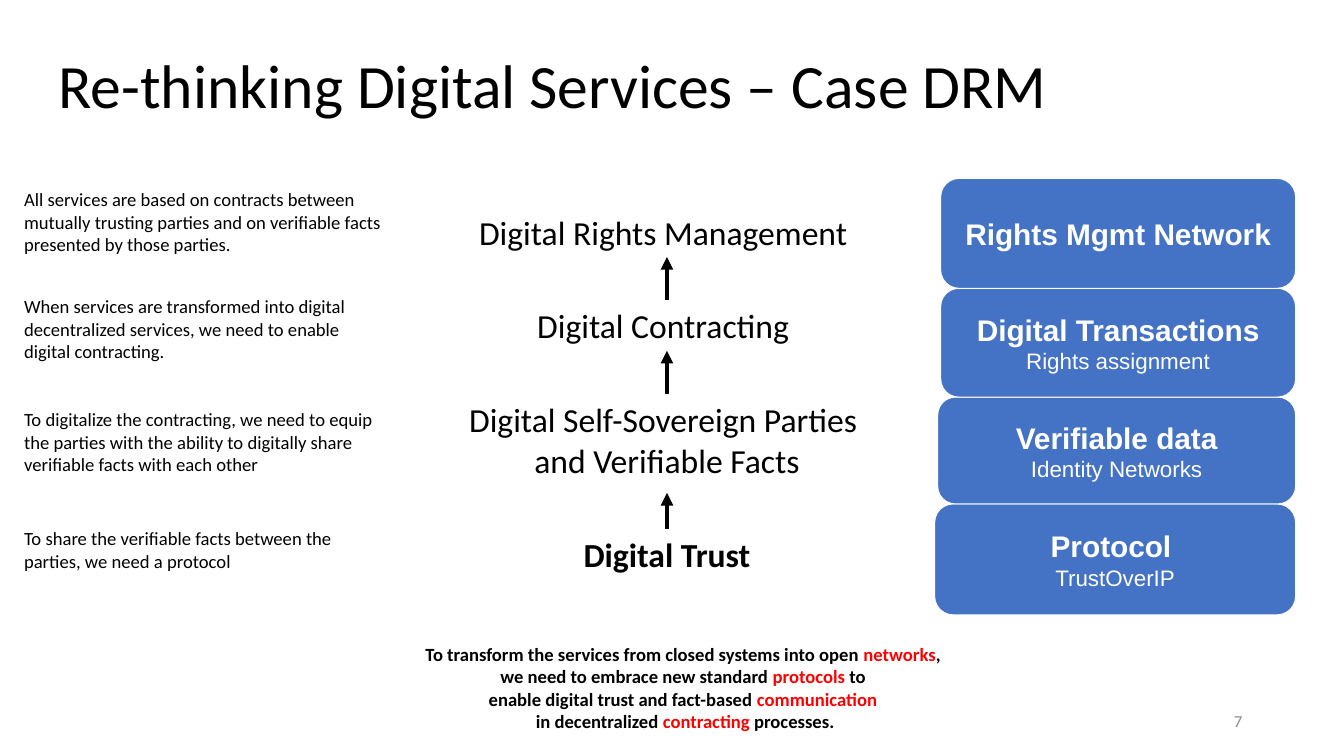
from lxml.etree import SubElement
from pptx import Presentation
from pptx.dml.color import RGBColor
from pptx.enum.shapes import MSO_CONNECTOR, MSO_SHAPE
from pptx.enum.text import MSO_ANCHOR, PP_ALIGN
from pptx.oxml.ns import qn
from pptx.util import Inches, Pt

TITLE = "Re-thinking Digital Services – Case DRM"
PAGE_NUMBER = "7"

REASONS = [
    (1.82, 0.77, "All services are based on contracts between mutually trusting parties "
                 "and on verifiable facts presented by those parties."),
    (2.88, 0.77, "When services are transformed into digital decentralized services, "
                 "we need to enable digital contracting."),
    (4.0, 0.77, "To digitalize the contracting, we need to equip the parties with the "
                "ability to digitally share verifiable facts with each other"),
    (5.18, 0.55, "To share the verifiable facts between the parties, we need a protocol"),
]
STEPS = [
    (2.05, 0.5, ["Digital Rights Management "], False),
    (2.98, 0.5, ["Digital Contracting "], False),
    (3.91, 0.98, ["Digital Self-Sovereign Parties ", "and Verifiable Facts"], False),
    (5.25, 0.5, ["Digital Trust"], True),
]
LAYERS = [
    (9.33, 1.77, 1.09, ["Rights Mgmt Network"]),
    (9.33, 2.86, 1.08, ["Digital Transactions", "Rights assignment"]),
    (9.3, 3.94, 1.06, ["Verifiable data", "Identity Networks"]),
    (9.27, 5.0, 1.1, ["Protocol ", "TrustOverIP"]),
]
CONCLUSION = [
    ("To transform the services from closed systems into open ", "networks", ", "),
    ("we need to embrace new standard ", "protocols", " to "),
    ("enable digital trust and fact-based ", "communication "),
    ("in decentralized ", "contracting ", "processes."),
]

THEME = {
    "text": RGBColor(0, 0, 0),
    "accent": RGBColor(0xFF, 0, 0),
    "muted": RGBColor(0x8C, 0x8C, 0x8C),
    "layer": RGBColor(0x44, 0x72, 0xC4),
    "white": RGBColor(0xFF, 0xFF, 0xFF),
    "body_font": "Calibri",
    "layer_font": "Arial",
    "title_size": 44,
    "step_size": 24,
    "layer_size": 21.3,
    "detail_size": 16,
    "note_size": 13.3,
    "number_size": 12,
}

STEP_LEFT, STEP_WIDTH = 3.92, 5.39
LAYER_RIGHT = 12.85


def style(run, size, color=THEME["text"], bold=False, font=THEME["body_font"]):
    run.font.name = font
    run.font.size = Pt(size)
    run.font.bold = bold
    run.font.color.rgb = color


def add_text(slide, box, lines, size, align=PP_ALIGN.LEFT, bold=False, color=THEME["text"]):
    frame = slide.shapes.add_textbox(*map(Inches, box)).text_frame
    frame.word_wrap = True
    frame.text = "\n".join(lines)
    for paragraph in frame.paragraphs:
        paragraph.alignment = align
        style(paragraph.runs[0], size, color, bold)
    return frame


def add_title(slide):
    title = slide.shapes.title
    title.left, title.top, title.width, title.height = map(Inches, (0.48, 0.3, 12.37, 1.16))
    frame = title.text_frame
    frame.text = TITLE
    frame.vertical_anchor = MSO_ANCHOR.MIDDLE
    frame.paragraphs[0].alignment = PP_ALIGN.LEFT
    frame.paragraphs[0].line_spacing = 0.9
    style(frame.paragraphs[0].runs[0], THEME["title_size"])


def add_arrow(slide, start, end):
    center = Inches(STEP_LEFT + STEP_WIDTH / 2)
    arrow = slide.shapes.add_connector(
        MSO_CONNECTOR.STRAIGHT, center, Inches(start), center, Inches(end))
    arrow.line.color.rgb = THEME["text"]
    arrow.line.width = Pt(3)
    SubElement(arrow.line._get_or_add_ln(), qn("a:tailEnd"), type="triangle")
    SubElement(arrow._element.spPr, qn("a:effectLst"))


def add_layer(slide, left, top, height, lines):
    layer = slide.shapes.add_shape(
        MSO_SHAPE.ROUNDED_RECTANGLE,
        *map(Inches, (left, top, LAYER_RIGHT - left, height)))
    layer.shadow.inherit = False
    layer.fill.solid()
    layer.fill.fore_color.rgb = THEME["layer"]
    layer.line.color.rgb = THEME["white"]
    layer.line.width = Pt(0.75)
    frame = layer.text_frame
    frame.word_wrap = True
    frame.vertical_anchor = MSO_ANCHOR.MIDDLE
    frame.margin_left = frame.margin_right = Inches(0.13)
    frame.margin_top = frame.margin_bottom = Inches(0.07)
    frame.text = "\n".join(lines)
    for index, paragraph in enumerate(frame.paragraphs):
        paragraph.alignment = PP_ALIGN.CENTER
        size = THEME["detail_size"] if index else THEME["layer_size"]
        style(paragraph.runs[0], size, THEME["white"], index == 0, THEME["layer_font"])


def add_conclusion(slide):
    frame = add_text(slide, (2.15, 6.33, 9.29, 1), [line[0] for line in CONCLUSION],
                     THEME["note_size"], PP_ALIGN.CENTER, bold=True)
    for paragraph, (_, *rest) in zip(frame.paragraphs, CONCLUSION):
        for words, color in zip(rest, (THEME["accent"], THEME["text"])):
            run = paragraph.add_run()
            run.text = words
            style(run, THEME["note_size"], color, bold=True)


def main():
    deck = Presentation()
    deck.slide_width, deck.slide_height = Inches(13.33), Inches(7.5)
    slide = deck.slides.add_slide(deck.slide_layouts[5])

    add_title(slide)
    number = add_text(slide, (9.42, 6.95, 3, 0.4), [PAGE_NUMBER], THEME["number_size"],
                      PP_ALIGN.RIGHT, color=THEME["muted"])
    number.vertical_anchor = MSO_ANCHOR.MIDDLE

    for top, height, lines, bold in STEPS:
        add_text(slide, (STEP_LEFT, top, STEP_WIDTH, height), lines,
                 THEME["step_size"], PP_ALIGN.CENTER, bold)
    for (top, height, *_), (next_top, *_) in zip(STEPS, STEPS[1:]):
        add_arrow(slide, next_top, top + height)
    for layer in reversed(LAYERS):
        add_layer(slide, *layer)
    for top, height, reason in REASONS:
        add_text(slide, (0.14, top, 3.79, height), [reason], THEME["note_size"])
    add_conclusion(slide)

    deck.save("out.pptx")


if __name__ == "__main__":
    main()
